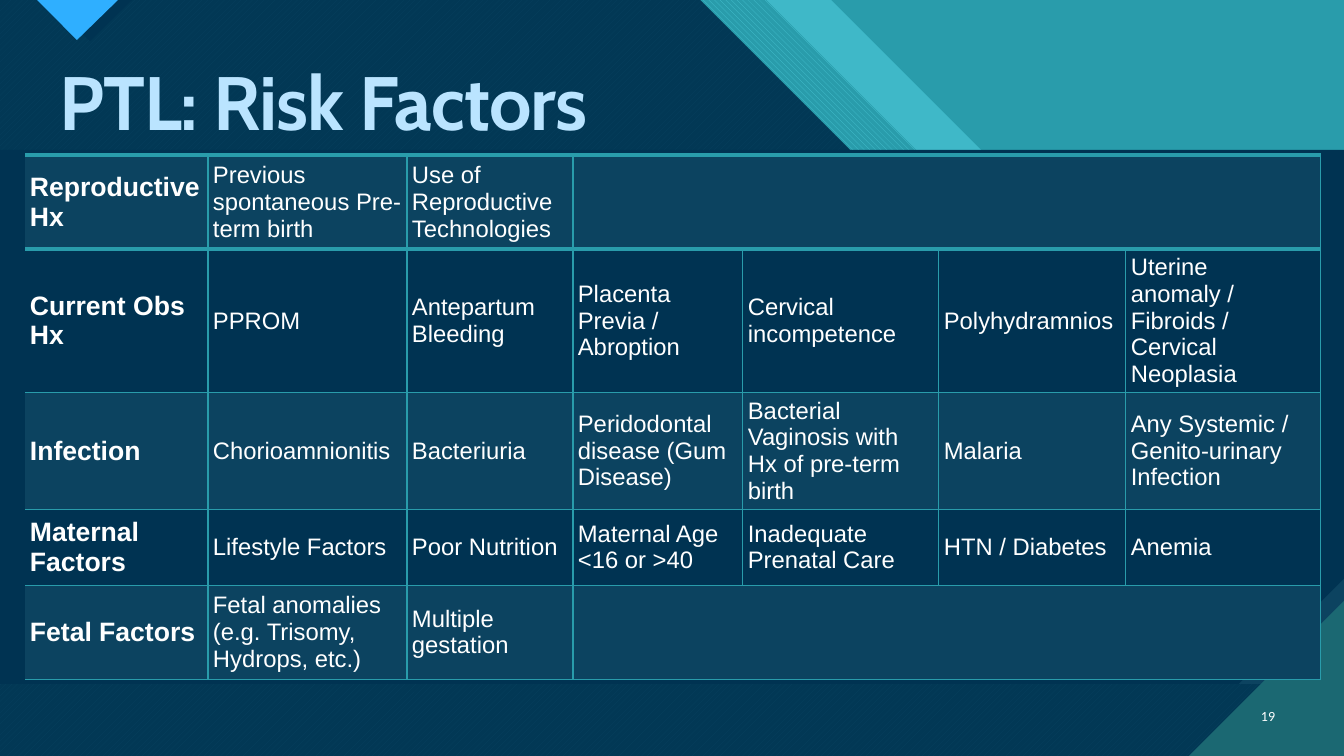
from dataclasses import dataclass

from pptx import Presentation, util as u
from pptx.dml.color import RGBColor
from pptx.enum import dml, text
from pptx.oxml import parse_xml
from pptx.oxml.ns import nsdecls

PX = 12192000 / 1344


def px(n):
    """Turn pixels into EMU."""
    return u.Emu(round(n * PX))


@dataclass(frozen=True)
class Theme:
    """Colours, fonts and type sizes."""
    teal: str = "299CAB"
    aqua: str = "47C3D3"
    deep: str = "1B6872"
    navy: str = "003352"
    band: str = "0C4360"
    blue: str = "2FAFFF"
    title: str = "BAE4FF"
    white: str = "FFFFFF"
    title_font: str = "Cabin"
    body_font: str = "Arial"
    number_font: str = "Calibri"
    title_size: int = 54
    head_size: int = 19
    body_size: int = 17
    number_size: int = 10


def write(tf, words, *, font, size, color, bold=False, align=None, anchor=None, spacing=None, track=None):
    """Write one formatted paragraph into a text frame."""
    tf.word_wrap = True
    tf.vertical_anchor = anchor
    p = tf.paragraphs[0]
    p.alignment = align
    p.line_spacing = spacing
    r = p.add_run()
    r.text = words
    r.font.name, r.font.size, r.font.bold = font, u.Pt(size), bold
    r.font.color.rgb = RGBColor.from_string(color)
    if track is not None:
        r.font._element.set("spc", str(track))


class Deck:
    """Hold the theme and the current slide."""

    def __init__(self, prs, theme):
        """Add a title-only slide with a plain background."""
        self.theme = theme
        self.s = prs.slides.add_slide(prs.slide_layouts[5])
        fill = self.s.background.fill
        fill.solid()
        fill.fore_color.rgb = RGBColor.from_string(theme.teal)

    def polygon(self, points, color, *, back=None, pattern=None, alpha=None):
        """Draw a closed outline with a solid or patterned fill."""
        fb = self.s.shapes.build_freeform(*points[0], scale=PX)
        fb.add_line_segments(points[1:], close=True)
        sp = fb.convert_to_shape()
        sp.shadow.inherit = False
        sp.line.fill.background()
        if pattern is None:
            sp.fill.solid()
        else:
            sp.fill.patterned()
            sp.fill.pattern = pattern
            sp.fill.back_color.rgb = RGBColor.from_string(back)
        sp.fill.fore_color.rgb = RGBColor.from_string(color)
        if alpha:
            clr = sp._element.spPr.find(".//{*}solidFill/{*}srgbClr")
            clr.append(parse_xml(f'<a:alpha {nsdecls("a")} val="{alpha * 1000}"/>'))

    def title(self, words, x, y, w, h):
        """Place and format the title placeholder in front of the backdrop."""
        t, sp = self.theme, self.s.shapes.title
        self.s.shapes._spTree.append(sp._element)
        sp.left, sp.top, sp.width, sp.height = map(px, (x, y, w, h))
        write(sp.text_frame, words, font=t.title_font, size=t.title_size, color=t.title, bold=True,
              align=text.PP_ALIGN.LEFT, anchor=text.MSO_ANCHOR.MIDDLE, spacing=0.9, track=-70)

    def label(self, words, x, y, w, h, **fmt):
        """Add a text box."""
        write(self.s.shapes.add_textbox(*map(px, (x, y, w, h))).text_frame, words, **fmt)

    def border(self, cell, sides):
        """Rule the given sides of a cell, with widths in points."""
        tc = cell._tc.get_or_add_tcPr()
        for i, (side, width) in enumerate(sides.items()):
            tc.insert(i, parse_xml(
                f'<a:ln{side} {nsdecls("a")} w="{u.Pt(width)}"><a:solidFill>'
                f'<a:srgbClr val="{self.theme.teal}"/></a:solidFill></a:ln{side}>'))

    def table(self, rows, x, y, widths, heights):
        """Add a banded table, merging the unused end of short rows."""
        t = self.theme
        frame = self.s.shapes.add_table(len(rows), len(widths), *map(px, (x, y, sum(widths), sum(heights))))
        tbl = frame.table
        tbl.first_row, tbl.first_col = False, True
        tbl._tbl.tblPr.find("{*}tableStyleId").text = "{2D5ABB26-0587-4C30-8999-92F81FD0307C}"
        for col, w in zip(tbl.columns, widths):
            col.width = px(w)
        for row, h in zip(tbl.rows, heights):
            row.height = px(h)
        for i, words in enumerate(rows):
            if len(words) < len(widths):
                tbl.cell(i, len(words)).merge(tbl.cell(i, len(widths) - 1))
            for j in range(len(widths)):
                cell = tbl.cell(i, j)
                cell.margin_left = cell.margin_right = px(5)
                cell.margin_top = cell.margin_bottom = px(5)
                cell.vertical_anchor = text.MSO_ANCHOR.MIDDLE
                if i % 2:
                    cell.fill.background()
                else:
                    cell.fill.solid()
                    cell.fill.fore_color.rgb = RGBColor.from_string(t.band)
                sides = {"L": 1} if j else {}
                self.border(cell, sides | {"R": 1, "T": 3 if i < 2 else 1, "B": 3 if i == 0 else 1})
                if j < len(words):
                    write(cell.text_frame, words[j], font=t.body_font, color=t.white, bold=j == 0,
                          size=t.body_size if j else t.head_size, anchor=text.MSO_ANCHOR.MIDDLE)


RISKS = [
    ["Reproductive Hx", "Previous spontaneous Pre-term birth", "Use of Reproductive Technologies"],
    ["Current Obs Hx", "PPROM", "Antepartum Bleeding", "Placenta Previa / Abroption",
     "Cervical incompetence", "Polyhydramnios", "Uterine anomaly / Fibroids / Cervical Neoplasia"],
    ["Infection", "Chorioamnionitis", "Bacteriuria", "Peridodontal disease (Gum Disease)",
     "Bacterial Vaginosis with Hx of pre-term birth", "Malaria", "Any Systemic / Genito-urinary Infection"],
    ["Maternal Factors", "Lifestyle Factors", "Poor Nutrition", "Maternal Age <16 or >40",
     "Inadequate Prenatal Care", "HTN / Diabetes", "Anemia"],
    ["Fetal Factors", "Fetal anomalies (e.g. Trisomy, Hydrops, etc.)", "Multiple gestation"],
]


def sweep(x, shoulder):
    """Outline a backdrop layer whose slanted edge starts at x."""
    return [(0, 0), (x, 0), (x + 300, 300), (shoulder, 300),
            (1344, 1644 - shoulder), (1344, 756), (0, 756)]


def main():
    """Build the slide."""
    prs = Presentation()
    prs.slide_width, prs.slide_height = px(1344), px(756)
    t = Theme()
    deck = Deck(prs, t)
    pat = dml.MSO_PATTERN
    deck.polygon(sweep(831, 1244), t.aqua, alpha=74)
    deck.polygon(sweep(766, 1193), t.aqua, back=t.teal, pattern=pat.WIDE_DOWNWARD_DIAGONAL)
    deck.polygon(sweep(700, 1127), t.aqua, back=t.deep, pattern=pat.WIDE_UPWARD_DIAGONAL)
    deck.polygon(sweep(700, 1127), t.navy, alpha=90)
    deck.polygon([(48, 0), (132, 0), (90, 41)], t.navy)
    deck.polygon([(37, 0), (118, 0), (77, 40)], t.blue)
    deck.polygon([(0, 150), (1344, 150), (1344, 579), (1239, 684), (0, 684)], t.navy)
    deck.polygon([(1344, 579), (1344, 684), (1239, 684)], t.band)
    deck.polygon([(1189, 756), (1344, 756), (1344, 601)], t.deep)
    deck.title("PTL: Risk Factors", 49, 59, 1285, 93)
    deck.table(RISKS, 25, 155, [183, 199, 166, 170, 196, 187, 195], [94, 94, 94, 76, 94])
    deck.label("19", 1241, 696, 44, 40, font=t.number_font, size=t.number_size, color=t.white,
               align=text.PP_ALIGN.RIGHT, anchor=text.MSO_ANCHOR.MIDDLE)
    prs.save("out.pptx")


if __name__ == "__main__":
    main()
